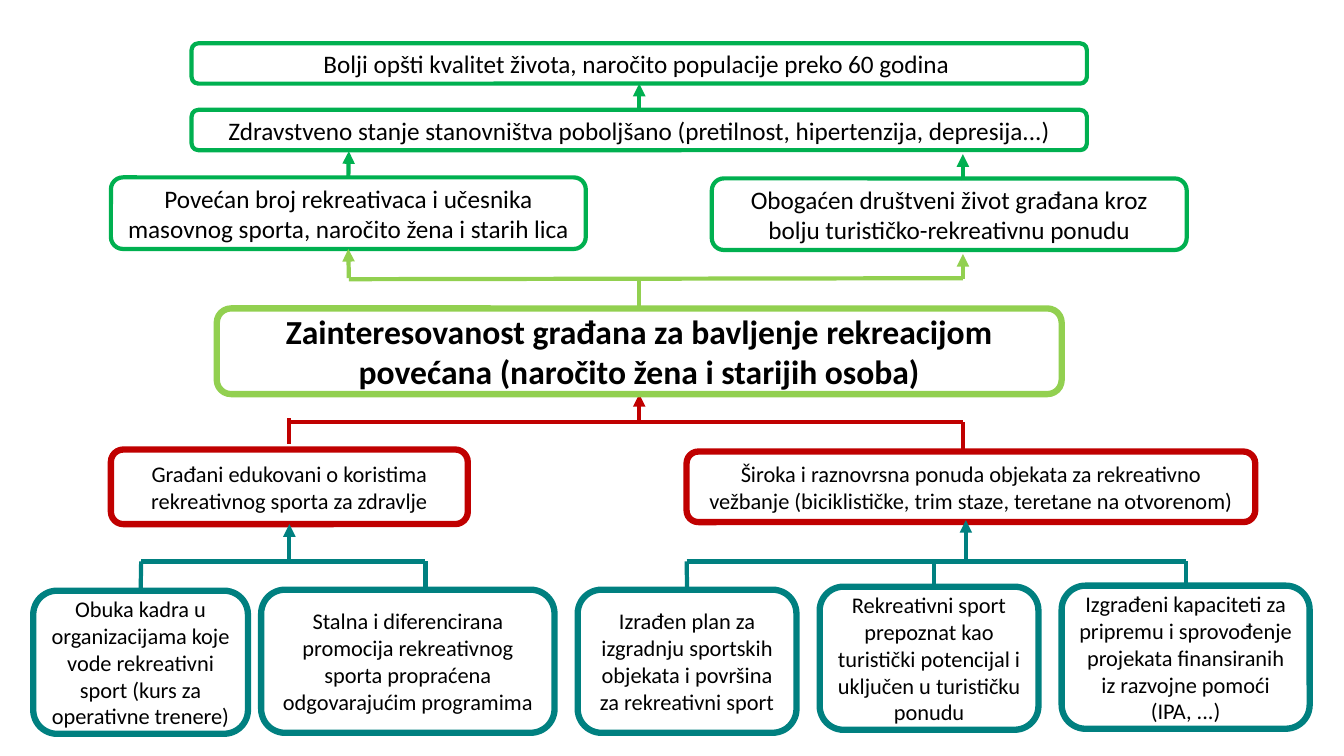
from dataclasses import dataclass

import pptx
import pptx.dml.color
import pptx.enum.shapes
import pptx.enum.text
import pptx.oxml.ns
import pptx.oxml.xmlchemy
import pptx.util
from pptx.util import Inches

TOP, BOTTOM = 0, 2  # connection sites of a box


@dataclass(frozen=True)
class Theme:
    font: str = "Calibri"
    text: str = "000000"
    activity: str = "008080"
    result: str = "C00000"
    goal: str = "92D050"
    effect: str = "00B050"
    small: int = 16
    medium: int = 18
    large: int = 24
    thin: float = 3
    thick: float = 4.5


class ObjectiveTree:
    def __init__(self, slide, theme):
        self.slide = slide
        self.theme = theme

    def outline(self, line, color, width):
        line.color.rgb = pptx.dml.color.RGBColor.from_string(color)
        line.width = pptx.util.Pt(width)

    def box(self, text, left, top, width, height, color, size, weight, bold=False):
        shape = self.slide.shapes.add_shape(
            pptx.enum.shapes.MSO_SHAPE.ROUNDED_RECTANGLE,
            *map(Inches, (left, top, width, height)))
        shape.shadow.inherit = False
        shape.fill.background()
        self.outline(shape.line, color, weight)
        frame = shape.text_frame
        frame.word_wrap = True
        frame.vertical_anchor = pptx.enum.text.MSO_ANCHOR.MIDDLE
        paragraph = frame.paragraphs[0]
        paragraph.alignment = pptx.enum.text.PP_ALIGN.CENTER
        run = paragraph.add_run()
        run.text = text
        font_format = {"name": self.theme.font, "size": pptx.util.Pt(size), "bold": bold}
        for attribute, value in font_format.items():
            setattr(run.font, attribute, value)
        run.font.color.rgb = pptx.dml.color.RGBColor.from_string(self.theme.text)
        return shape

    def link(self, start, end, color, arrow=False, source=None, target=None):
        """Draw a line; source and target are (box, site) pairs to join."""
        line = self.slide.shapes.add_connector(
            pptx.enum.shapes.MSO_CONNECTOR.STRAIGHT, *map(Inches, (*start, *end)))
        self.outline(line.line, color, self.theme.thin)
        properties = line._element.find(pptx.oxml.ns.qn("p:spPr"))
        if arrow:
            tail = pptx.oxml.xmlchemy.OxmlElement("a:tailEnd")
            tail.set("type", "triangle")
            properties.find(pptx.oxml.ns.qn("a:ln")).append(tail)
        properties.append(pptx.oxml.xmlchemy.OxmlElement("a:effectLst"))
        if source:
            line.begin_connect(*source)
        if target:
            line.end_connect(*target)
        return line


def build_activities(tree):
    """Bottom row; returns its boxes from left to right."""
    theme = tree.theme
    activities = [
        ("Obuka kadra u organizacijama koje vode rekreativni sport "
         "(kurs za operativne trenere)", 0.33, 5.86, 2.13),
        ("Stalna i diferencirana promocija rekreativnog sporta propraćena "
         "odgovarajućim programima", 2.59, 5.85, 2.91),
        ("Izrađen plan za izgradnju sportskih objekata i površina za "
         "rekreativni sport", 5.73, 5.85, 2.17),
        ("Rekreativni sport prepoznat kao turistički potencijal i uključen "
         "u turističku ponudu", 8.13, 5.82, 2.17),
        ("Izgrađeni kapaciteti za pripremu i sprovođenje projekata "
         "finansiranih iz razvojne pomoći (IPA, ...)", 10.53, 5.81, 2.46),
    ]
    return [tree.box(text, left, top, width, 1.42, theme.activity, theme.small, theme.thick)
            for text, left, top, width in activities]


def build_tree(tree):
    theme = tree.theme
    training, promotion, plan, tourism, capacity = build_activities(tree)

    # Results
    educated = tree.box("Građani edukovani o koristima rekreativnog sporta za zdravlje",
                        1.1, 4.46, 3.54, 0.74, theme.result, theme.small, theme.thick)
    tree.box("Široka i raznovrsna ponuda objekata za rekreativno vežbanje "
             "(biciklističke, trim staze, teretane na otvorenom)",
             6.81, 4.48, 5.64, 0.7, theme.result, theme.small, theme.thick)

    # Activities to results: risers, bars and arrows
    bar = 5.57
    risers = [(1.4, 5.86, training), (4.22, 5.83, None), (6.81, 5.85, plan),
              (9.26, 5.81, None), (11.76, 5.81, capacity)]
    for x, bottom, activity in risers:
        tree.link((x, bottom), (x, bar), theme.activity,
                  source=(activity, TOP) if activity else None)
    for left, right in ((1.4, 4.22), (6.81, 11.76)):
        tree.link((left, bar), (right, bar), theme.activity)
    tree.link((2.87, bar), (2.87, 5.2), theme.activity, True, target=(educated, BOTTOM))
    tree.link((9.58, bar), (9.58, 5.16), theme.activity, True)

    # Results to goal
    tree.link((2.87, 4.4), (2.87, 4.15), theme.result)
    tree.link((9.55, 4.45), (9.55, 4.19), theme.result)
    tree.link((2.87, 4.19), (9.55, 4.19), theme.result)
    goal_arrow = tree.link((6.34, 4.17), (6.34, 3.91), theme.result, True)

    # Goal, in front of the arrow that reaches it
    goal = tree.box("Zainteresovanost građana za bavljenje rekreacijom povećana "
                    "(naročito žena i starijih osoba)",
                    2.15, 3.06, 8.38, 0.85, theme.goal, theme.large, theme.thick, True)
    goal_arrow.end_connect(goal, BOTTOM)

    # Effects
    effect_style = (theme.effect, theme.medium, theme.thin)
    participants = tree.box("Povećan broj rekreativaca i učesnika masovnog sporta, "
                            "naročito žena i starih lica",
                            1.1, 1.76, 4.71, 0.71, *effect_style)
    tree.box("Obogaćen društveni život građana kroz bolju turističko-rekreativnu ponudu",
             7.06, 1.77, 4.71, 0.71, *effect_style)
    health = tree.box("Zdravstveno stanje stanovništva poboljšano "
                      "(pretilnost, hipertenzija, depresija...)",
                      1.9, 1.09, 8.88, 0.4, *effect_style)
    quality = tree.box("Bolji opšti kvalitet života, naročito populacije preko 60 godina ",
                       1.9, 0.43, 8.88, 0.4, *effect_style)

    # Goal to effects
    tree.link((6.34, 3.06), (6.34, 2.77), theme.goal, source=(goal, TOP))
    tree.link((3.46, 2.77), (9.55, 2.76), theme.goal)
    tree.link((3.46, 2.76), (3.46, 2.5), theme.goal, True, target=(participants, BOTTOM))
    tree.link((9.55, 2.77), (9.55, 2.52), theme.goal, True)

    # Between effects
    tree.link((3.46, 1.76), (3.46, 1.5), theme.effect, True, source=(participants, TOP))
    tree.link((9.55, 1.79), (9.55, 1.53), theme.effect, True)
    tree.link((6.34, 1.09), (6.34, 0.83), theme.effect, True,
              source=(health, TOP), target=(quality, BOTTOM))


def main():
    deck = pptx.Presentation()
    deck.slide_width, deck.slide_height = Inches(13.33), Inches(7.5)
    blank_layout = deck.slide_layouts[6]
    build_tree(ObjectiveTree(deck.slides.add_slide(blank_layout), Theme()))
    deck.save("out.pptx")


if __name__ == "__main__":
    main()
